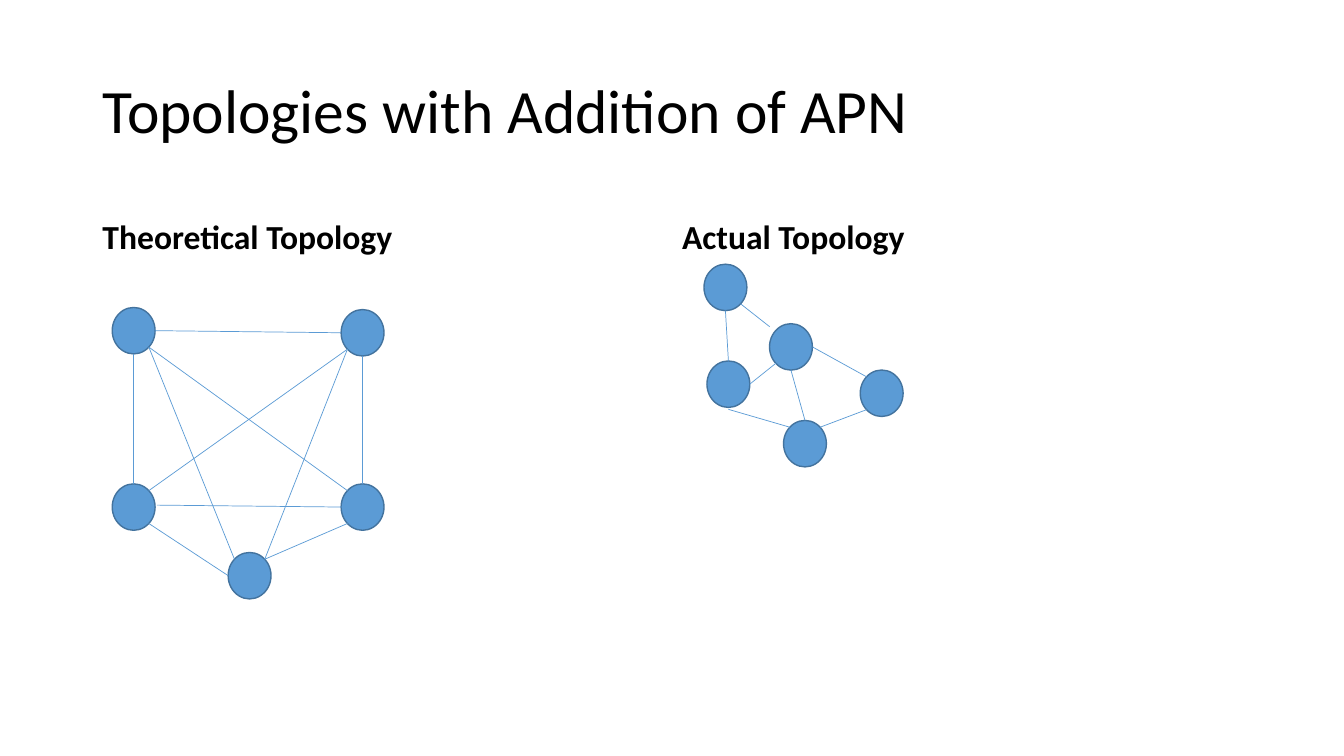
import math

import pptx
import pptx.dml.color
import pptx.enum.shapes
import pptx.enum.text
import pptx.oxml.ns
import pptx.util
from lxml import etree

Pt = pptx.util.Pt
RGBColor = pptx.dml.color.RGBColor

BLACK = RGBColor(0x00, 0x00, 0x00)
WHITE = RGBColor(0xFF, 0xFF, 0xFF)
NODE_BLUE = RGBColor(0x5B, 0x9B, 0xD5)
NODE_EDGE = RGBColor(0x43, 0x73, 0x9E)

FONT = "Calibri"
NODE_W, NODE_H = 30.6, 33.2

# Attachment sites on a node, as clockwise angles from the right
SITES = {"right": 0, "bottom right": 45, "bottom": 90, "bottom left": 135,
         "left": 180, "top left": 225, "top": 270, "top right": 315}

# Node centres and link ends, in points from the corner of the table column.
# A link end is a (node, site) pair, or a bare position where it hangs loose.
THEORETICAL_NODES = {
    "NW": (29.5, 84.2), "NE": (193, 85.7),
    "SW": (29.5, 210.2), "SE": (193, 210.2), "APN": (112.3, 259.2),
}
THEORETICAL_LINKS = [
    (("NW", "bottom right"), ("SE", "top left")),
    (("NE", "bottom left"), ("SW", "top right")),
    (("NW", "bottom"), ("SW", "top")),
    (("NE", "bottom"), ("SE", "top")),
    (("NW", "right"), ("NE", "left")),
    ((46.1, 208.8), (179.3, 210.2)),
    (("SE", "bottom left"), ("APN", "top right")),
    (("SW", "bottom right"), ("APN", "left")),
    (("NW", "bottom right"), ("APN", "top left")),
    (("NE", "bottom left"), ("APN", "top right")),
]
ACTUAL_NODES = {
    "north": (38.2, 53.3), "hub": (85, 95.8), "south": (95, 164.9),
    "east": (149.8, 128.9), "west": (40.3, 122.4),
}
ACTUAL_LINKS = [
    (("hub", "bottom"), ("south", "top")),
    (("hub", "right"), ("east", "top left")),
    (("south", "top right"), ("east", "bottom left")),
    ((69.8, 81.4), ("north", "bottom right")),
    (("north", "bottom"), ("west", "top")),
    ((40.3, 140.4), ("south", "top left")),
    (("west", "right"), ("hub", "bottom left")),
]


def format_text(paragraph, size, bold=False):
    paragraph.font.name = FONT
    paragraph.font.size = Pt(size)
    paragraph.font.bold = bold
    paragraph.font.color.rgb = BLACK


def add_title(slide, left, top, width, height):
    title = slide.shapes.title
    title.left, title.top = Pt(left), Pt(top)
    title.width, title.height = Pt(width), Pt(height)
    title.text_frame.text = "Topologies with Addition of APN"
    title.text_frame.vertical_anchor = pptx.enum.text.MSO_ANCHOR.MIDDLE
    heading = title.text_frame.paragraphs[0]
    heading.alignment = pptx.enum.text.PP_ALIGN.LEFT
    heading.line_spacing = 0.9
    format_text(heading, 44)


def add_comparison_table(slide, left, top, width, height, headings):
    comparison = slide.shapes.add_table(
        1, len(headings), Pt(left), Pt(top), Pt(width), Pt(height)).table
    for cell, heading in zip(comparison.rows[0].cells, headings):
        cell.fill.solid()
        cell.fill.fore_color.rgb = WHITE
        cell.text = heading
        format_text(cell.text_frame.paragraphs[0], 24, bold=True)


def add_topology(slide, left, top, nodes, links):
    def locate(end):
        if end[0] not in nodes:
            return left + end[0], top + end[1]
        node, site = end
        x, y = nodes[node]
        angle = math.radians(SITES[site])
        return (left + x + NODE_W / 2 * math.cos(angle),
                top + y + NODE_H / 2 * math.sin(angle))

    # Nodes
    for x, y in nodes.values():
        node = slide.shapes.add_shape(
            pptx.enum.shapes.MSO_SHAPE.OVAL,
            Pt(left + x - NODE_W / 2), Pt(top + y - NODE_H / 2),
            Pt(NODE_W), Pt(NODE_H))
        node.shadow.inherit = False
        node.fill.solid()
        node.fill.fore_color.rgb = NODE_BLUE
        node.line.color.rgb = NODE_EDGE
        node.line.width = Pt(1)

    # Links
    for start, finish in links:
        x1, y1 = locate(start)
        x2, y2 = locate(finish)
        link = slide.shapes.add_connector(
            pptx.enum.shapes.MSO_CONNECTOR.STRAIGHT,
            Pt(x1), Pt(y1), Pt(x2), Pt(y2))
        link.line.color.rgb = NODE_BLUE
        link.line.width = Pt(0.5)
        etree.SubElement(link.element.spPr, pptx.oxml.ns.qn("a:effectLst"))


def add_topologies_slide(deck):
    slide = deck.slides.add_slide(deck.slide_layouts[5])
    left, width = 66, 828
    table_top = 152
    add_title(slide, left, 28.8, width, 104.4)
    add_comparison_table(slide, left, table_top, width, 352,
                         ["Theoretical Topology", "Actual Topology"])
    add_topology(slide, left, table_top, THEORETICAL_NODES, THEORETICAL_LINKS)
    add_topology(slide, left + width / 2, table_top, ACTUAL_NODES, ACTUAL_LINKS)


def main():
    deck = pptx.Presentation()
    deck.slide_width, deck.slide_height = Pt(960), Pt(540)
    add_topologies_slide(deck)
    deck.save("out.pptx")


if __name__ == "__main__":
    main()
